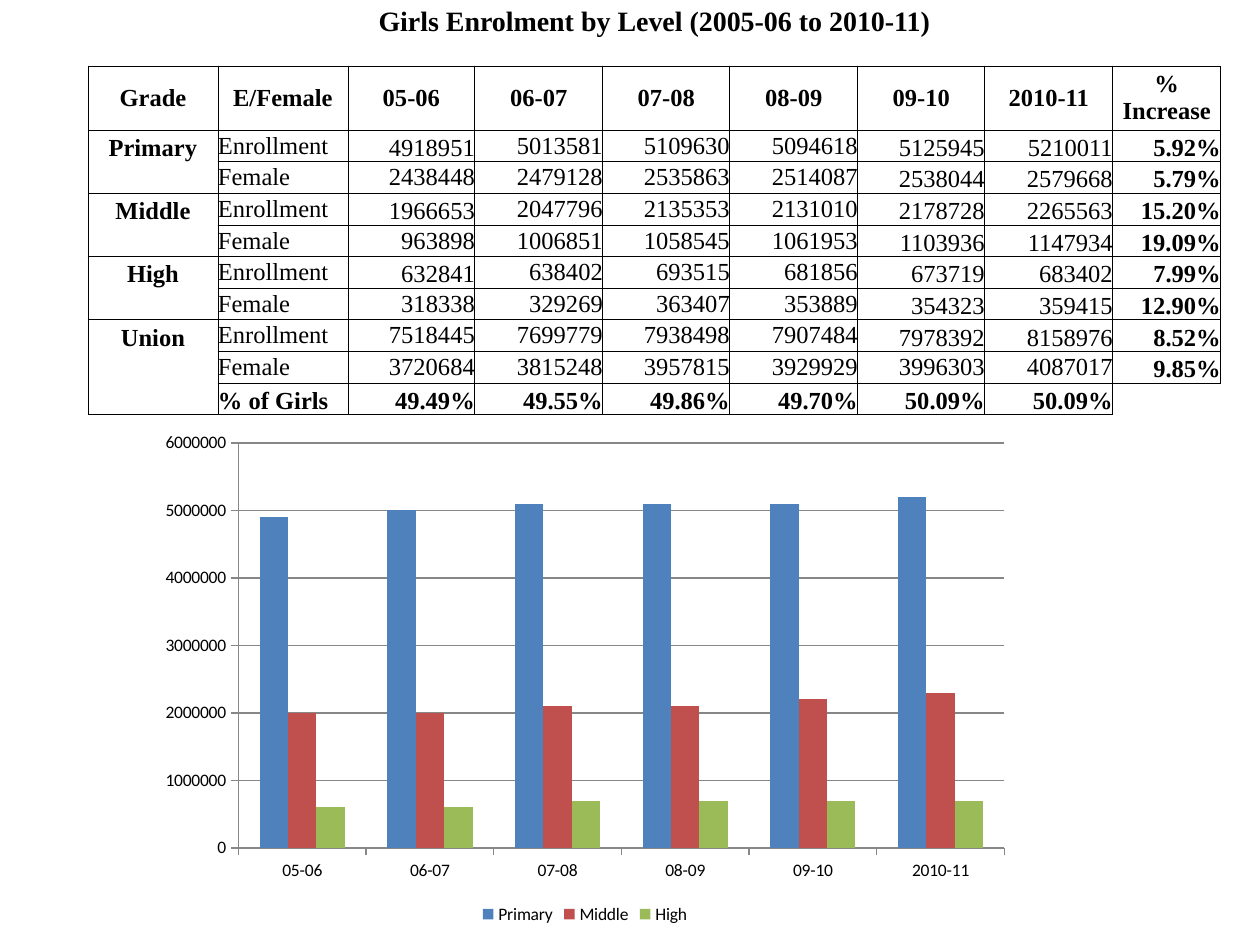
from lxml import etree
from pptx import Presentation
from pptx.chart.data import CategoryChartData
from pptx.dml.color import RGBColor
from pptx.enum.chart import XL_CHART_TYPE, XL_LEGEND_POSITION, XL_TICK_MARK
from pptx.enum.text import MSO_ANCHOR, PP_ALIGN
from pptx.oxml.ns import qn
from pptx.util import Emu, Pt

PX = 7257.6
COLORS = {
    "ink": "000000",
    "axis": "878787",
    "Primary": "4F81BD",
    "Middle": "C0504D",
    "High": "9BBB59",
}
CLUSTERED = XL_CHART_TYPE.COLUMN_CLUSTERED
LEGEND_BOTTOM = XL_LEGEND_POSITION.BOTTOM
TICK_OUT = XL_TICK_MARK.OUTSIDE
LEFT, CENTER, RIGHT = PP_ALIGN.LEFT, PP_ALIGN.CENTER, PP_ALIGN.RIGHT
ANCHORS = {"m": MSO_ANCHOR.MIDDLE, "b": MSO_ANCHOR.BOTTOM}

TITLE = "Girls Enrolment by Level (2005-06 to 2010-11)"
YEARS = ["05-06", "06-07", "07-08", "08-09", "09-10", "2010-11"]
HEADINGS = ["Grade", "E/Female", *YEARS, "%\vIncrease"]
ENROLMENT = [
    ("Primary", "Enrollment", [4918951, 5013581, 5109630, 5094618, 5125945, 5210011], "5.92%", "bmbmmmbbb"),
    ("", "Female", [2438448, 2479128, 2535863, 2514087, 2538044, 2579668], "5.79%", "bmmmmmbbb"),
    ("Middle", "Enrollment", [1966653, 2047796, 2135353, 2131010, 2178728, 2265563], "15.20%", "bmbmmmbbb"),
    ("", "Female", [963898, 1006851, 1058545, 1061953, 1103936, 1147934], "19.09%", "bmmmmmbbb"),
    ("High", "Enrollment", [632841, 638402, 693515, 681856, 673719, 683402], "7.99%", "bmbmmmbbb"),
    ("", "Female", [318338, 329269, 363407, 353889, 354323, 359415], "12.90%", "bmmmmmbbb"),
    ("Union", "Enrollment", [7518445, 7699779, 7938498, 7907484, 7978392, 8158976], "8.52%", "bmmmmmbbb"),
    ("", "Female", [3720684, 3815248, 3957815, 3929929, 3996303, 4087017], "9.85%", "bmmmmmmmb"),
    ("", "% of Girls", ["49.49%", "49.55%", "49.86%", "49.70%", "50.09%", "50.09%"], "", "bbbbbbbbb"),
]
CHARTED = ["Primary", "Middle", "High"]
COLUMN_WIDTHS = [130, 130, 127, 128, 127, 128, 127, 128, 108]
HEAD_HEIGHTS = [38, 28, 64]
BODY_HEIGHT = 285


def px(length):
    return Emu(round(length * PX))


def color(name):
    return RGBColor.from_string(COLORS[name])


def style_cell(cell, borders, text="", align=LEFT, anchor="b", size=14, bold=False):
    properties = cell._tc.get_or_add_tcPr()
    for side in "LRTB":
        line = etree.SubElement(properties, qn(f"a:ln{side}"), w=str(Pt(0.5)))
        if side in borders:
            fill = etree.SubElement(line, qn("a:solidFill"))
            etree.SubElement(fill, qn("a:srgbClr"), val=COLORS["ink"])
        else:
            etree.SubElement(line, qn("a:noFill"))
    cell.fill.background()
    cell.margin_left = cell.margin_right = cell.margin_top = cell.margin_bottom = 0
    cell.vertical_anchor = ANCHORS[anchor]
    cell.text = text
    for para in cell.text_frame.paragraphs:
        para.alignment = align
        para.font.name = "Times New Roman"
        para.font.size = Pt(size)
        para.font.bold = bold
        para.font.color.rgb = color("ink")


def add_enrolment_table(page, box):
    left, top, width, height = box
    row_count = len(HEAD_HEIGHTS) + len(ENROLMENT)
    frame = page.shapes.add_table(
        row_count, len(HEADINGS), px(left), px(top), px(width), px(height))
    table = frame.table
    table.first_row = table.horz_banding = False
    for column, column_width in zip(table.columns, COLUMN_WIDTHS):
        column.width = px(column_width)
    body_heights = [BODY_HEIGHT / len(ENROLMENT)] * len(ENROLMENT)
    for row, row_height in zip(table.rows, HEAD_HEIGHTS + body_heights):
        row.height = px(row_height)

    for index, heading in enumerate(HEADINGS):
        title = "" if index else TITLE
        style_cell(table.cell(0, index), "", title, CENTER, size=16, bold=True)
        style_cell(table.cell(1, index), "B", size=12)
        style_cell(table.cell(2, index), "LRTB", heading, CENTER, "m", bold=True)
    table.cell(0, 0).merge(table.cell(0, len(HEADINGS) - 1))

    for offset, (grade, measure, counts, increase, anchors) in enumerate(ENROLMENT):
        row = len(HEAD_HEIGHTS) + offset
        last = offset == len(ENROLMENT) - 1
        closes_group = last or bool(ENROLMENT[offset + 1][0])
        grade_borders = "LR" + ("T" if grade else "") + ("B" if closes_group else "")
        texts = [grade, measure, *map(str, counts), increase]
        for index, (text, anchor) in enumerate(zip(texts, anchors)):
            borders, align, bold = "LRTB", RIGHT, last
            if index == 0:
                borders, align, bold = grade_borders, CENTER, True
            elif index == 1:
                align = LEFT
            elif index == len(texts) - 1:
                borders, bold = ("LRTB" if increase else "LT"), True
            style_cell(table.cell(row, index), borders, text, align, anchor, bold=bold)


def add_enrolment_chart(page, box):
    data = CategoryChartData()
    data.categories = YEARS
    for grade, measure, counts, increase, anchors in ENROLMENT:
        if grade in CHARTED:
            data.add_series(grade, [round(count, -5) for count in counts])
    chart = page.shapes.add_chart(CLUSTERED, *map(px, box), data).chart
    chart.has_title = False
    chart.font.name = "Calibri"
    chart.font.size = Pt(10)
    chart.font.color.rgb = color("ink")
    chart.has_legend = True
    chart.legend.position = LEGEND_BOTTOM
    chart.legend.include_in_layout = False
    plot = chart.plots[0]
    plot.gap_width = 150
    plot.vary_by_categories = False
    for series in plot.series:
        series.format.fill.solid()
        series.format.fill.fore_color.rgb = color(series.name)
    chart.value_axis.has_major_gridlines = True
    lines = [chart.value_axis.major_gridlines.format.line]
    for axis in (chart.category_axis, chart.value_axis):
        axis.major_tick_mark = TICK_OUT
        lines.append(axis.format.line)
    for line in lines:
        line.color.rgb = color("axis")
        line.width = Pt(0.75)


def main():
    deck = Presentation()
    deck.slide_width, deck.slide_height = px(1260), px(945)
    page = deck.slides.add_slide(deck.slide_layouts[6])
    add_enrolment_table(page, (88, 0, sum(COLUMN_WIDTHS), 415))
    add_enrolment_chart(page, (148, 423, 874, 506))
    deck.save("out.pptx")


if __name__ == "__main__":
    main()
